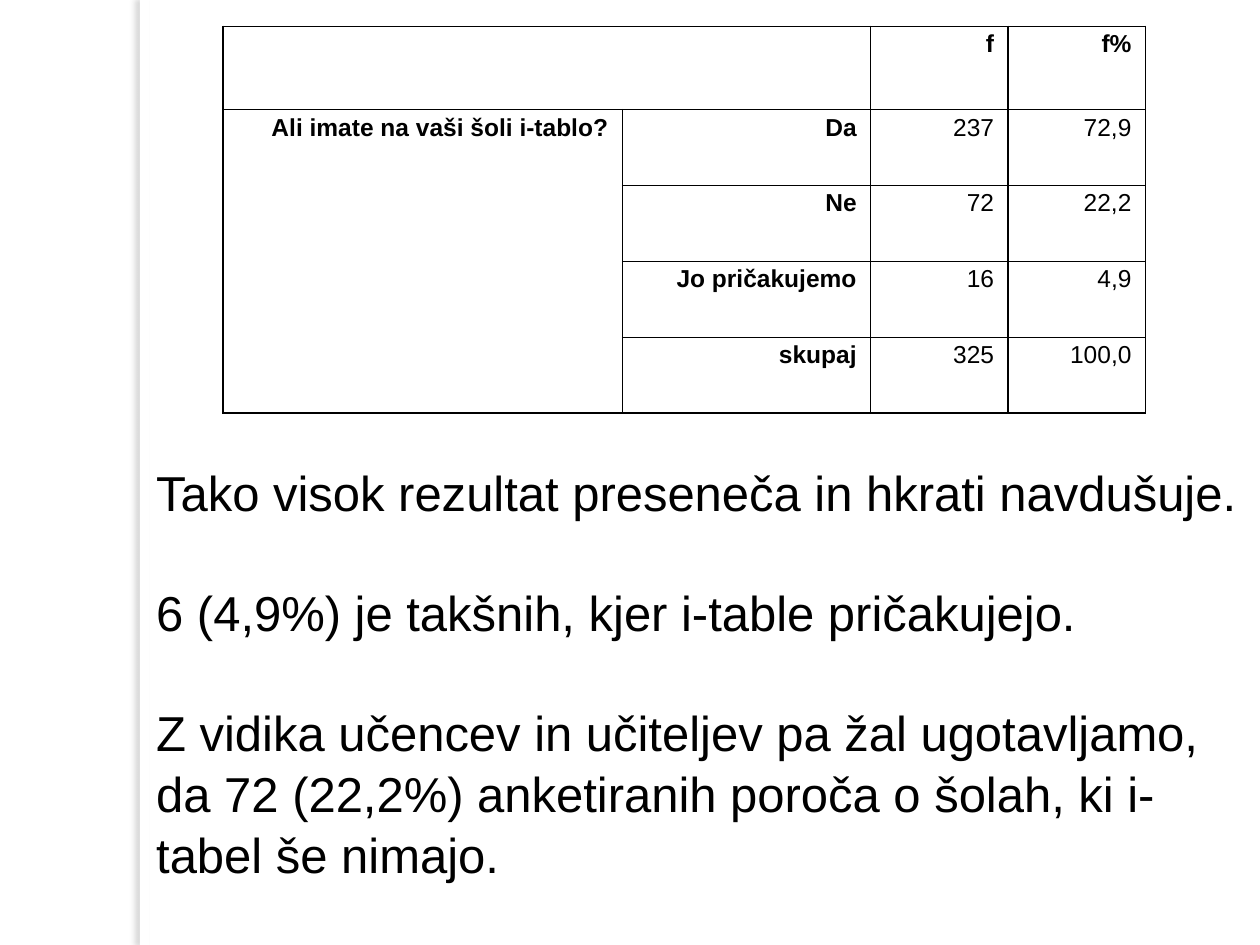
from lxml.etree import SubElement as Sub
from pptx import Presentation
from pptx.dml.color import RGBColor as Rgb
from pptx.enum.shapes import MSO_SHAPE as Kind
from pptx.enum.text import MSO_ANCHOR as Anchor, PP_ALIGN as Align
from pptx.oxml.ns import qn
from pptx.util import Cm, Pt

HUES = {"ink": "000000", "paper": "FFFFFF", "shade": "6E6E6E"}
ROWS = [
    ["", "", "f", "f%"],
    ["Ali imate na vaši šoli i-tablo?", "Da", "237", "72,9"],
    ["", "Ne", "72", "22,2"],
    ["", "Jo pričakujemo", "16", "4,9"],
    ["", "skupaj", "325", "100,0"],
]
NOTES = [
    "Tako visok rezultat preseneča in hkrati navdušuje.",
    "6 (4,9%) je takšnih, kjer i-table pričakujejo.",
    "Z vidika učencev in učiteljev pa žal ugotavljamo, da 72 (22,2%) "
    "anketiranih poroča o šolah, ki i-tabel še nimajo.",
]


class Deck:
    """Holds the style and the current slide."""

    def __init__(self, wide, high):
        self.show = Presentation()
        self.show.slide_width, self.show.slide_height = Cm(wide), Cm(high)
        self.slide = self.show.slides.add_slide(self.show.slide_layouts[6])
        self.face = "Arial"

    def font(self, para, size, bold=False):
        font = para.font
        font.name, font.size, font.bold = self.face, Pt(size), bold
        font.color.rgb = Rgb.from_string(HUES["ink"])

    def strip(self, *box):
        bar = self.slide.shapes.add_shape(Kind.RECTANGLE, *map(Cm, box))
        bar.fill.solid()
        bar.fill.fore_color.rgb = Rgb.from_string(HUES["paper"])
        bar.line.fill.background()
        bar.shadow.inherit = False
        glow = Sub(bar._element.spPr.find(qn("a:effectLst")), qn("a:outerShdw"),
                   blurRad=str(Pt(3)), dist=str(Pt(3)), dir="10800000", algn="ctr", rotWithShape="0")
        hue = Sub(glow, qn("a:srgbClr"), val=HUES["shade"])
        Sub(hue, qn("a:alpha"), val="25000")

    def frame(self, cell):
        props = cell._tc.get_or_add_tcPr()
        for side in ("lnL", "lnR", "lnT", "lnB"):
            line = Sub(props, qn(f"a:{side}"), w=str(Pt(1)))
            Sub(Sub(line, qn("a:solidFill")), qn("a:srgbClr"), val=HUES["ink"])
        cell.fill.background()

    def cell(self, cell, text, bold):
        cell.margin_left = cell.margin_right = Cm(0.18)
        cell.margin_top = cell.margin_bottom = 0
        cell.text = text
        para = cell.text_frame.paragraphs[0]
        para.alignment, para.line_spacing = Align.RIGHT, 1.15
        for side in ("marL", "marR"):
            para._p.get_or_add_pPr().set(side, str(Cm(0.1)))
        self.font(para, 14, bold)
        self.frame(cell)

    def table(self, left, top, rows, wides, highs, spans):
        grid = self.slide.shapes.add_table(
            len(rows), len(wides), Cm(left), Cm(top), Cm(sum(wides)), Cm(sum(highs))).table
        grid.first_row = grid.horz_banding = False
        for col, wide in zip(grid.columns, wides):
            col.width = Cm(wide)
        for row, high in zip(grid.rows, highs):
            row.height = Cm(high)
        for r, row in enumerate(rows):
            for c, text in enumerate(row):
                self.cell(grid.cell(r, c), text, r == 0 or c < 2)
        for start, end in spans:
            grid.cell(*start).merge(grid.cell(*end))

    def text(self, paras, size, *box):
        frame = self.slide.shapes.add_textbox(*map(Cm, box)).text_frame
        frame.word_wrap = True
        frame.vertical_anchor = Anchor.MIDDLE
        frame.text = "\n".join(paras)
        for i, para in enumerate(frame.paragraphs):
            self.font(para, size)
            para.line_spacing = 1.04
            para.space_before = Pt(33.5 if i else 0)


def main():
    deck = Deck(25.4, 19.05)
    deck.strip(2.82, 0, 0.2, 19.05)
    deck.table(4.5, 0.53, ROWS, [8.05, 5, 2.77, 2.77], [1.68] + [1.53] * 4,
               [((0, 0), (0, 1)), ((1, 0), (4, 0))])
    deck.text(NOTES, 28, 2.9, 9.22, 22.5, 8.64)
    deck.show.save("out.pptx")


if __name__ == "__main__":
    main()
